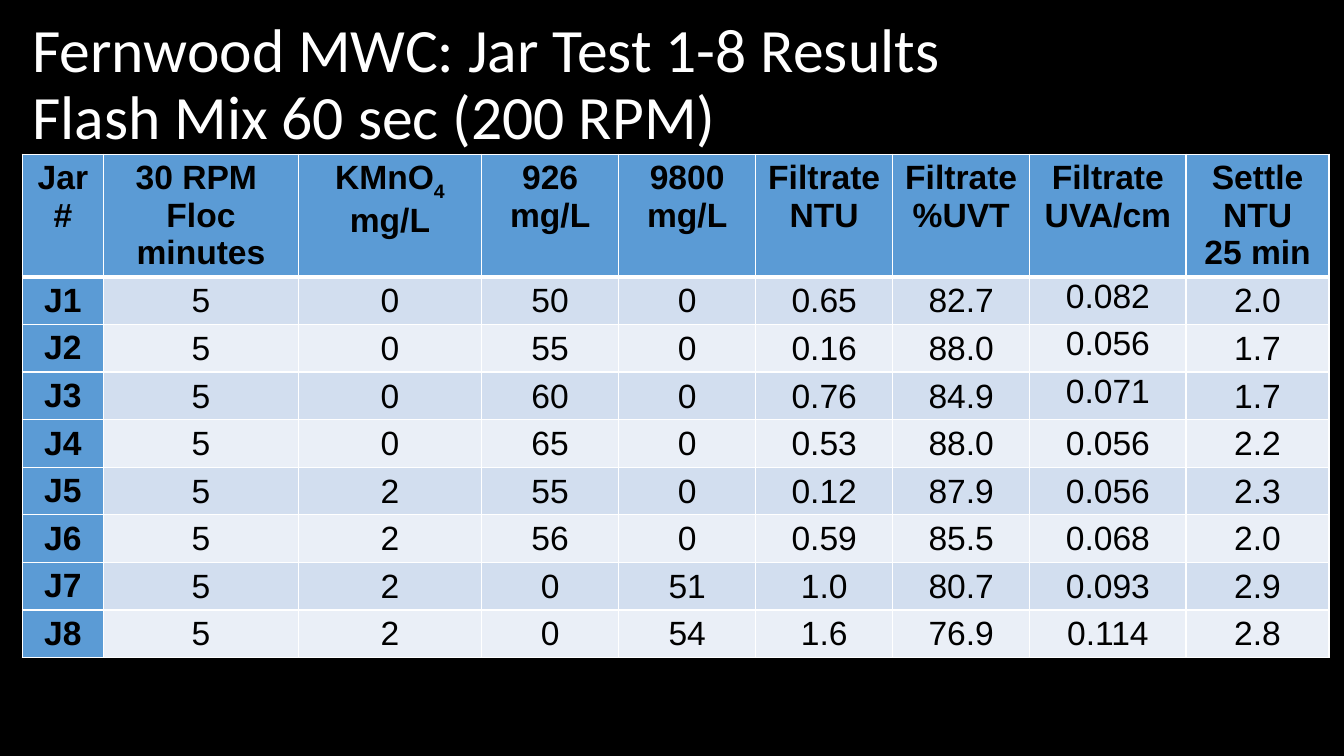
from lxml import etree
from pptx import Presentation
from pptx.dml.color import RGBColor
from pptx.enum.text import MSO_ANCHOR, PP_ALIGN
from pptx.oxml.ns import qn
from pptx.util import Pt

TOP, MIDDLE = MSO_ANCHOR.TOP, MSO_ANCHOR.MIDDLE
LEFT, CENTER = PP_ALIGN.LEFT, PP_ALIGN.CENTER

BLACK = RGBColor(0x00, 0x00, 0x00)
WHITE = RGBColor(0xFF, 0xFF, 0xFF)
BLUE = RGBColor(0x5B, 0x9B, 0xD5)
BANDS = RGBColor(0xD2, 0xDE, 0xEF), RGBColor(0xEA, 0xEF, 0xF7)

TITLE = "Fernwood MWC: Jar Test 1-8 Results\vFlash Mix 60 sec (200 RPM)"
WIDTHS = [58.3, 139, 131, 97.9, 97.9, 97.9, 97.9, 111.6, 102.2]
HEAD_HIGH, ROW_HIGH = 87.6, 34
UVA = 7  # column of Filtrate UVA/cm
HEADS = ["Jar\v#", "30 RPM \nFloc\nminutes", "KMnO_4\nmg/L", "926\nmg/L",
         "9800\nmg/L", "Filtrate\nNTU", "Filtrate\n%UVT",
         "Filtrate\nUVA/cm", "Settle\nNTU\n25 min"]
TESTS = [
    ["J1", "5", "0", "50", "0", "0.65", "82.7", "0.082", "2.0"],
    ["J2", "5", "0", "55", "0", "0.16", "88.0", "0.056", "1.7"],
    ["J3", "5", "0", "60", "0", "0.76", "84.9", "0.071", "1.7"],
    ["J4", "5", "0", "65", "0", "0.53", "88.0", "0.056", "2.2"],
    ["J5", "5", "2", "55", "0", "0.12", "87.9", "0.056", "2.3"],
    ["J6", "5", "2", "56", "0", "0.59", "85.5", "0.068", "2.0"],
    ["J7", "5", "2", "0", "51", "1.0", "80.7", "0.093", "2.9"],
    ["J8", "5", "2", "0", "54", "1.6", "76.9", "0.114", "2.8"],
]


def write(frame, text, size=24, font="Arial", color=BLACK, bold=False,
          align=CENTER, space=None):
    """Fill a frame; newline parts paragraphs, \\v breaks a line, _ lowers the rest."""
    for i, line in enumerate(text.split("\n")):
        para = frame.paragraphs[0] if i == 0 else frame.add_paragraph()
        para.alignment = align
        para.line_spacing = space
        base, _, sub = line.partition("_")
        para.text = base
        if sub:
            low = para.add_run()
            low.text = sub
            low.font._element.set("baseline", "-25000")
        for run in para.runs:
            run.font.size = Pt(size)
            run.font.name = font
            run.font.color.rgb = color
            run.font.bold = bold


def edge(cell, bottom):
    """Give a cell white borders, one point but for the bottom."""
    props = cell._tc.get_or_add_tcPr()
    sides = {"a:lnL": 1, "a:lnR": 1, "a:lnT": 1, "a:lnB": bottom}
    for i, (tag, width) in enumerate(sides.items()):
        line = etree.Element(qn(tag), w=str(Pt(width)))
        fill = etree.SubElement(line, qn("a:solidFill"))
        etree.SubElement(fill, qn("a:srgbClr"), val=str(WHITE))
        props.insert(i, line)


class Deck:
    def __init__(self):
        self.prs = Presentation()
        self.prs.slide_width, self.prs.slide_height = Pt(960), Pt(540)
        self.slide = self.prs.slides.add_slide(self.prs.slide_layouts[5])
        back = self.slide.background.fill
        back.solid()
        back.fore_color.rgb = BLACK

    def title(self, text, x, y, w, h):
        box = self.slide.shapes.title
        box.left, box.top, box.width, box.height = Pt(x), Pt(y), Pt(w), Pt(h)
        frame = box.text_frame
        frame.word_wrap = True
        frame.vertical_anchor = MIDDLE
        write(frame, text, size=44, font="Calibri", color=WHITE, align=LEFT,
              space=0.9)

    def cell(self, cell, text, fill, bold=False, anchor=TOP, tight=False,
             bottom=1):
        cell.fill.solid()
        cell.fill.fore_color.rgb = fill
        cell.vertical_anchor = anchor
        if tight:
            cell.margin_left = cell.margin_right = cell.margin_top = Pt(0.7)
            cell.margin_bottom = Pt(0)
        write(cell.text_frame, text, bold=bold)
        edge(cell, bottom)

    def table(self, x, y):
        high = HEAD_HIGH + ROW_HIGH * len(TESTS)
        grid = self.slide.shapes.add_table(
            len(TESTS) + 1, len(HEADS), Pt(x), Pt(y), Pt(sum(WIDTHS)),
            Pt(high)).table
        grid.first_col = True
        for col, width in zip(grid.columns, WIDTHS):
            col.width = Pt(width)
        for r, row in enumerate(grid.rows):
            row.height = Pt(ROW_HIGH if r else HEAD_HIGH)
        for c, head in enumerate(HEADS):
            self.cell(grid.cell(0, c), head, BLUE, bold=True, bottom=3)
        for r, (jar, *values) in enumerate(TESTS, 1):
            self.cell(grid.cell(r, 0), jar, BLUE, bold=True)
            for c, value in enumerate(values, 1):
                anchor = TOP if c == UVA and r <= 3 else MIDDLE
                self.cell(grid.cell(r, c), value, BANDS[(r - 1) % 2],
                          anchor=anchor, tight=True)


def main():
    deck = Deck()
    deck.title(TITLE, 15.8, 9.4, 878.4, 104.4)
    deck.table(15.8, 110.2)
    deck.prs.save("out.pptx")


if __name__ == "__main__":
    main()
